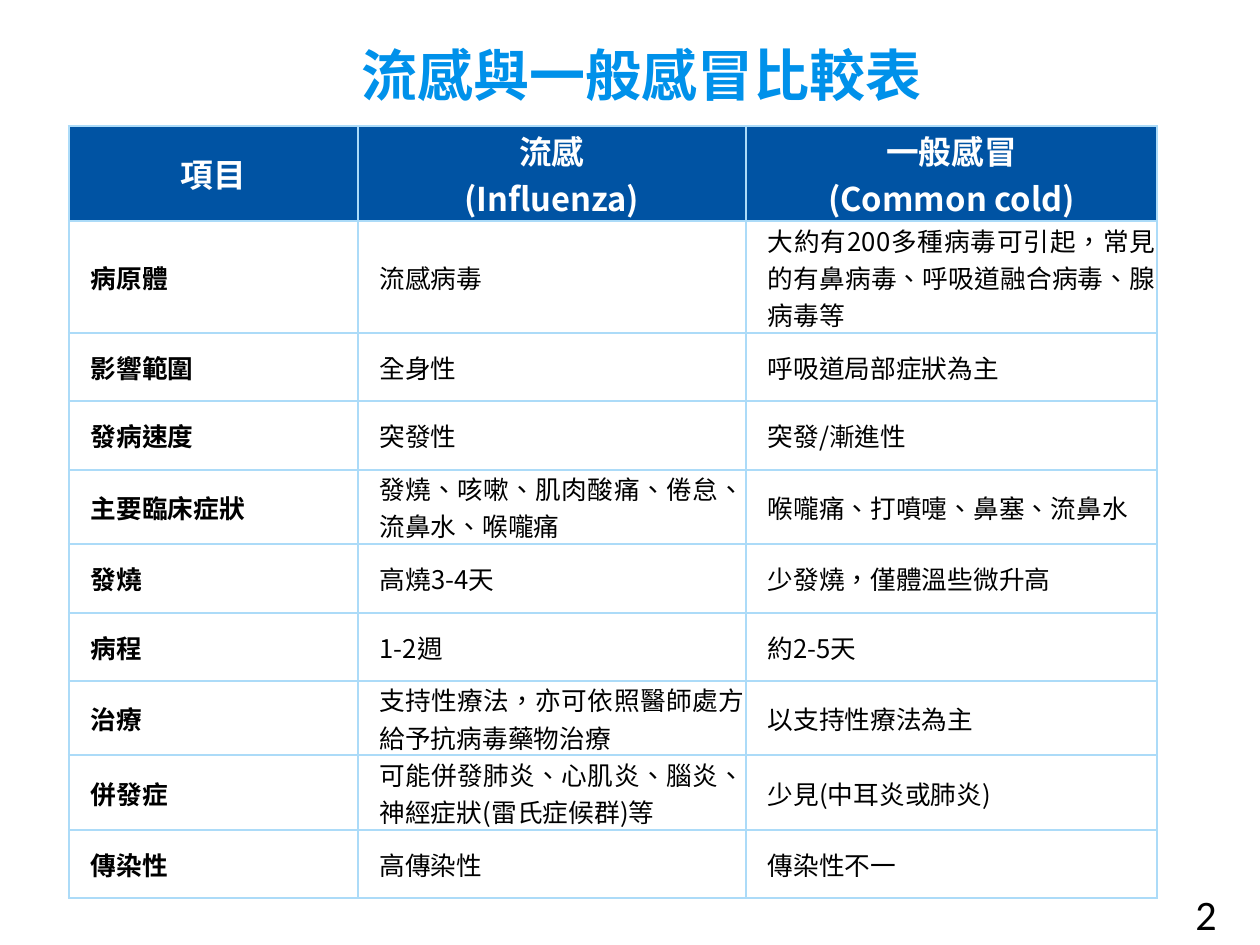
from dataclasses import dataclass

from lxml import etree
from pptx import Presentation
from pptx.dml.color import RGBColor
from pptx.enum.text import MSO_ANCHOR, MSO_AUTO_SIZE, PP_ALIGN
from pptx.oxml.ns import qn
from pptx.util import Inches, Pt

CENTER, RIGHT, JUSTIFY = PP_ALIGN.CENTER, PP_ALIGN.RIGHT, PP_ALIGN.JUSTIFY
TOP, MIDDLE, BOTTOM = MSO_ANCHOR.TOP, MSO_ANCHOR.MIDDLE, MSO_ANCHOR.BOTTOM
TITLE_ONLY = 5
PAGE_WIDTH = 7.5
PAGE_HEIGHT = PAGE_WIDTH * 3 / 4


@dataclass(frozen=True)
class Theme:
    font: str = "Noto Sans CJK SC"
    number_font: str = "Calibri"
    title: str = "0091EA"
    header_fill: str = "0053A3"
    border: str = "ACDBF8"
    white: str = "FFFFFF"
    black: str = "000000"
    title_size: int = 24
    header_size: int = 14
    body_size: int = 11
    number_size: int = 18
    border_width: int = 1


THEME = Theme()

TITLE = "流感與一般感冒比較表"
COLUMN_WIDTHS = [1.72, 2.31, 2.45]
ROWS = [
    ["項目", "流感\n(Influenza)", "一般感冒\n(Common cold)"],
    ["病原體", "流感病毒",
     "大約有200多種病毒可引起，常見的有鼻病毒、呼吸道融合病毒、腺病毒等"],
    ["影響範圍", "全身性", "呼吸道局部症狀為主"],
    ["發病速度", "突發性", "突發/漸進性"],
    ["主要臨床症狀", "發燒、咳嗽、肌肉酸痛、倦怠、流鼻水、喉嚨痛",
     "喉嚨痛、打噴嚏、鼻塞、流鼻水"],
    ["發燒", "高燒3-4天", "少發燒，僅體溫些微升高"],
    ["病程", "1-2週", "約2-5天"],
    ["治療", "支持性療法，亦可依照醫師處方給予抗病毒藥物治療", "以支持性療法為主"],
    ["併發症", "可能併發肺炎、心肌炎、腦炎、神經症狀(雷氏症候群)等",
     "少見(中耳炎或肺炎)"],
    ["傳染性", "高傳染性", "傳染性不一"],
]
ROW_HEIGHT = 4.07 / len(ROWS)


def write_text(frame, text, size, color, align, bold=False, font=THEME.font):
    """Fill a text frame and format every run alike."""
    frame.text = text
    frame.word_wrap = True
    for para in frame.paragraphs:
        para.alignment = align
        for span in para.runs:
            span.font.size = Pt(size)
            span.font.bold = bold
            span.font.name = font
            span.font.color.rgb = RGBColor.from_string(color)
            properties = span._r.get_or_add_rPr()
            properties.set("lang", "zh-TW")
            east_asian = etree.SubElement(properties, qn("a:ea"))
            east_asian.set("typeface", font)


def set_frame(frame, anchor, inset):
    frame.auto_size = MSO_AUTO_SIZE.NONE
    frame.vertical_anchor = anchor
    frame.margin_left = frame.margin_right = Inches(inset)
    frame.margin_top = frame.margin_bottom = Inches(inset)


def add_borders(cell):
    """Draw the same line on all four sides of a cell."""
    properties = cell._tc.get_or_add_tcPr()
    for index, side in enumerate(("a:lnL", "a:lnR", "a:lnT", "a:lnB")):
        line = etree.Element(qn(side), w=str(Pt(THEME.border_width)))
        fill = etree.SubElement(line, qn("a:solidFill"))
        etree.SubElement(fill, qn("a:srgbClr"), val=THEME.border)
        properties.insert(index, line)


def add_title(page, left, top, width, height):
    title = page.shapes.title
    title.left, title.top = Inches(left), Inches(top)
    title.width, title.height = Inches(width), Inches(height)
    set_frame(title.text_frame, BOTTOM, 0.1)
    write_text(title.text_frame, TITLE, THEME.title_size, THEME.title,
               CENTER, bold=True)


def format_cell(cell, text, is_header, is_label):
    cell.vertical_anchor = MIDDLE
    cell.margin_left = cell.margin_right = Inches(0.01)
    cell.margin_top = cell.margin_bottom = 0
    if is_header:
        cell.fill.solid()
        cell.fill.fore_color.rgb = RGBColor.from_string(THEME.header_fill)
        write_text(cell.text_frame, text, THEME.header_size, THEME.white,
                   CENTER, bold=True)
    else:
        cell.fill.background()
        write_text(cell.text_frame, text, THEME.body_size, THEME.black,
                   JUSTIFY, bold=is_label)
        for para in cell.text_frame.paragraphs:
            para._p.get_or_add_pPr().set("marL", str(Inches(0.12)))
    add_borders(cell)


def add_comparison(page, left, top):
    table = page.shapes.add_table(
        len(ROWS), len(COLUMN_WIDTHS), Inches(left), Inches(top),
        Inches(sum(COLUMN_WIDTHS)), Inches(ROW_HEIGHT * len(ROWS))).table
    table.horz_banding = False
    for column, width in zip(table.columns, COLUMN_WIDTHS):
        column.width = Inches(width)
    for row_index, texts in enumerate(ROWS):
        table.rows[row_index].height = Inches(ROW_HEIGHT)
        for column_index, text in enumerate(texts):
            format_cell(table.cell(row_index, column_index), text,
                        row_index == 0, column_index == 0)


def add_page_number(page, left, top, width, height):
    box = page.shapes.add_textbox(Inches(left), Inches(top),
                                  Inches(width), Inches(height))
    set_frame(box.text_frame, TOP, 0.1)
    write_text(box.text_frame, "2", THEME.number_size, THEME.black,
               RIGHT, font=THEME.number_font)


def main():
    deck = Presentation()
    deck.slide_width, deck.slide_height = Inches(PAGE_WIDTH), Inches(PAGE_HEIGHT)
    page = deck.slides.add_slide(deck.slide_layouts[TITLE_ONLY])

    # Title, comparison table and page number
    add_title(page, 0.34, 0.26, 6.96, 0.48)
    add_comparison(page, 0.41, 0.75)
    add_page_number(page, 6.89, 5.19, 0.45, 0.43)

    deck.save("out.pptx")


if __name__ == "__main__":
    main()
